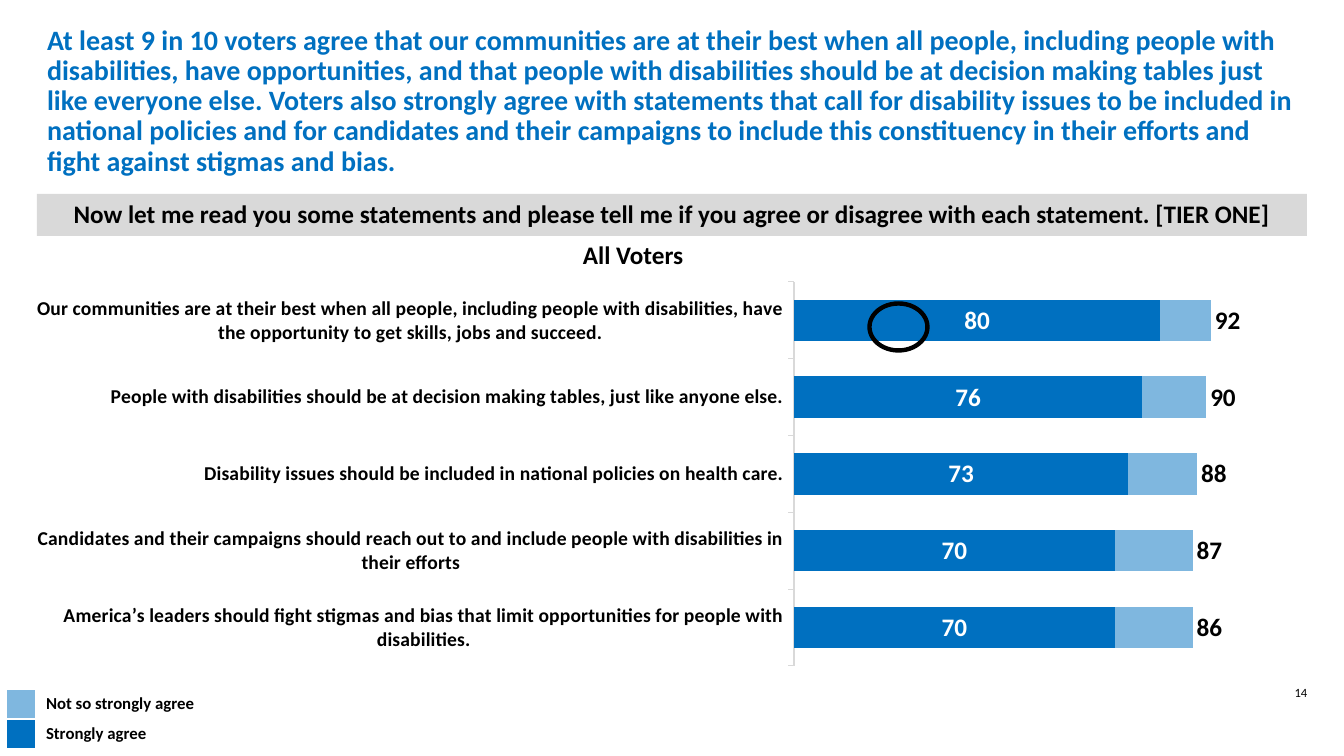
from lxml.etree import SubElement
from pptx import Presentation
from pptx.chart.data import CategoryChartData
from pptx.dml.color import RGBColor
from pptx.enum.chart import XL_CHART_TYPE as ChartType, XL_LABEL_POSITION as LabelPosition, XL_TICK_MARK as TickMark
from pptx.enum.shapes import MSO_SHAPE as Shape
from pptx.enum.text import MSO_ANCHOR as Anchor, MSO_AUTO_SIZE as AutoSize, PP_ALIGN as Align
from pptx.oxml.ns import qn
from pptx.util import Emu, Pt

FONT = "Calibri"
BLACK, WHITE, GREY = "000000", "FFFFFF", "D9D9D9"
STRONG, MILD = "0070C0", "7FB7DF"
TITLE = (
    "At least 9 in 10 voters agree that our communities are at their best when all people, "
    "including people with disabilities, have opportunities, and that people with disabilities "
    "should be at decision making tables just like everyone else. Voters also strongly agree with "
    "statements that call for disability issues to be included in national policies and for "
    "candidates and their campaigns to include this constituency in their efforts and fight "
    "against stigmas and bias."
)
QUESTION = (
    "Now let me read you some statements and please tell me if you agree or disagree "
    "with each statement. [TIER ONE]"
)
STATEMENTS = [
    "Our communities are at their best when all people, including people with disabilities, "
    "have the opportunity to get skills, jobs and succeed.",
    "People with disabilities should be at decision making tables, just like anyone else.",
    "Disability issues should be included in national policies on health care.",
    "Candidates and their campaigns should reach out to and include people with disabilities "
    "in their efforts",
    "America’s leaders should fight stigmas and bias that limit opportunities for people with "
    "disabilities.",
]
SERIES = [
    ("Series 1", (80, 76, 73, 70, 70), STRONG, (WHITE, LabelPosition.CENTER)),
    ("Series 2", (11, 14, 15, 17, 17), MILD, None),
    ("Series 3", (92, 90, 88, 87, 86), None, (BLACK, LabelPosition.INSIDE_BASE)),
]
LEGEND = [("Not so strongly agree", MILD), ("Strongly agree", STRONG)]
PLOT_LAYOUT = {"x": 0.61, "y": 0.02, "w": 0.37, "h": 0.96}


def px(length):
    return Emu(round(length * 914400 / 100.8))


def place(*lengths):
    return [px(length) for length in lengths]


def color(value):
    return RGBColor.from_string(value)


def style(font, size, value=BLACK, bold=True):
    font.name, font.size, font.bold = FONT, Pt(size), bold
    font.color.rgb = color(value)


def write(frame, text, size, value=BLACK, bold=True, align=Align.LEFT, spacing=None):
    para = frame.paragraphs[0]
    para.alignment = align
    if spacing:
        para.line_spacing = spacing
    span = para.add_run()
    span.text = text
    style(span.font, size, value, bold)


def add_label(page, box, text, size, bold, align):
    frame = page.shapes.add_textbox(*place(*box)).text_frame
    frame.word_wrap = True
    write(frame, text, size, bold=bold, align=align)


def add_heading(page):
    title = page.shapes.title
    title.left, title.top, title.width, title.height = place(37, 29, 1270, 145)
    frame = title.text_frame
    frame.word_wrap, frame.auto_size = True, AutoSize.NONE
    frame.vertical_anchor = Anchor.MIDDLE
    write(frame, TITLE, 20, STRONG, spacing=0.9)


def add_question(page):
    band = page.shapes.add_shape(Shape.RECTANGLE, *place(37, 194, 1270, 42))
    band.shadow.inherit = False
    band.fill.solid()
    band.fill.fore_color.rgb = color(GREY)
    band.line.fill.background()
    band.text_frame.word_wrap = True
    band.text_frame.vertical_anchor = Anchor.MIDDLE
    write(band.text_frame, QUESTION, 18, align=Align.CENTER, spacing=0.9)


def add_agreement_chart(page):
    data = CategoryChartData()
    data.categories = STATEMENTS
    for name, values, *_ in SERIES:
        data.add_series(name, values)
    chart = page.shapes.add_chart(ChartType.BAR_STACKED, *place(37, 274, 1240, 400), data).chart
    style(chart.font, 10, bold=False)
    chart.has_legend = chart.has_title = False

    statements = chart.category_axis
    statements.reverse_order = True
    statements.major_tick_mark = TickMark.OUTSIDE
    statements.has_major_gridlines = False
    statements.format.line.color.rgb = color(GREY)
    statements.format.line.width = Pt(0.75)
    style(statements.tick_labels.font, 14)
    percent = chart.value_axis
    percent.minimum_scale, percent.maximum_scale = 0, 100
    percent.has_major_gridlines = percent.visible = False

    plot = chart.plots[0]
    plot.gap_width, plot.overlap, plot.vary_by_categories = 86, 100, False
    for series, (_, _, fill, label) in zip(plot.series, SERIES):
        if fill:
            series.format.fill.solid()
            series.format.fill.fore_color.rgb = color(fill)
        else:
            series.format.fill.background()
        if label:
            labels = series.data_labels
            labels.show_value = True
            style(labels.font, 18, label[0])
            labels.position = label[1]

    area = chart.element.find(".//" + qn("c:plotArea"))
    layout = area.find(qn("c:layout"))
    if layout is None:
        layout = SubElement(area, qn("c:layout"))
        area.insert(0, layout)
    manual = SubElement(layout, qn("c:manualLayout"))
    SubElement(manual, qn("c:layoutTarget"), val="inner")
    for side in "xy":
        SubElement(manual, qn(f"c:{side}Mode"), val="edge")
    for key, value in PLOT_LAYOUT.items():
        SubElement(manual, qn(f"c:{key}"), val=str(value))


def add_border(cell):
    properties = cell._tc.get_or_add_tcPr()
    for side in ("lnL", "lnR", "lnT", "lnB"):
        line = SubElement(properties, qn(f"a:{side}"), w=str(Pt(1)))
        SubElement(SubElement(line, qn("a:solidFill")), qn("a:srgbClr"), val=WHITE)


def add_legend(page):
    table = page.shapes.add_table(len(LEGEND), 2, *place(6, 689, 216, 60)).table
    table.first_row = table.horz_banding = False
    for column, width in zip(table.columns, (30, 186)):
        column.width = px(width)
    for row, (text, fill) in enumerate(LEGEND):
        swatch, label = table.cell(row, 0), table.cell(row, 1)
        for cell in (swatch, label):
            add_border(cell)
            cell.margin_top = cell.margin_bottom = 0
            cell.vertical_anchor = Anchor.MIDDLE
        swatch.fill.solid()
        swatch.fill.fore_color.rgb = color(fill)
        SubElement(swatch.text_frame.paragraphs[0]._p, qn("a:endParaRPr"), sz="1200")
        label.fill.background()
        write(label.text_frame, text, 12)


def add_ring(page):
    ring = page.shapes.add_shape(Shape.DONUT, *place(868, 302, 61, 50))
    ring.shadow.inherit = False
    ring.adjustments[0] = 0.06
    ring.fill.solid()
    ring.fill.fore_color.rgb = color(BLACK)
    ring.line.color.rgb = color(BLACK)
    ring.line.width = Pt(1)


def main():
    """Build the slide on voter agreement with disability statements."""
    deck = Presentation()
    deck.slide_width, deck.slide_height = place(1344, 756)
    page = deck.slides.add_slide(deck.slide_layouts[5])
    add_label(page, (1263, 680, 76, 33), "14", 9, False, Align.CENTER)
    add_heading(page)
    add_question(page)
    add_agreement_chart(page)
    add_legend(page)
    add_label(page, (573, 234, 140, 40), "All Voters", 18, True, Align.LEFT)
    add_ring(page)
    deck.save("out.pptx")


if __name__ == "__main__":
    main()
